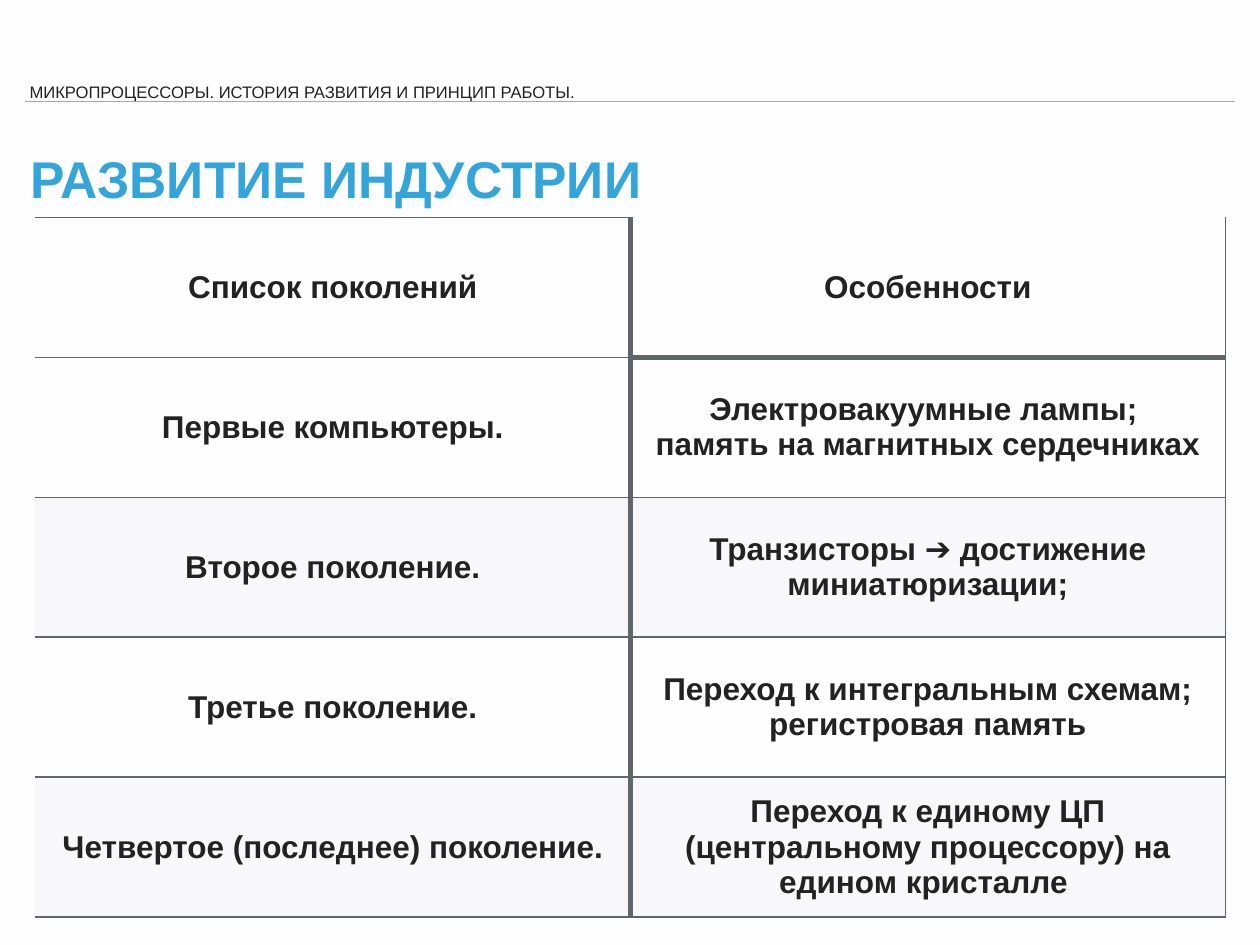
from lxml.etree import SubElement
from pptx import Presentation
from pptx.dml.color import RGBColor
from pptx.enum.shapes import MSO_CONNECTOR
from pptx.enum.text import MSO_ANCHOR, PP_ALIGN
from pptx.oxml.ns import qn
from pptx.util import Inches, Pt

ROWS = [
    ("Список поколений", ["Особенности"]),
    ("Первые компьютеры.", ["Электровакуумные лампы; ", "память на магнитных сердечниках"]),
    ("Второе поколение.", ["Транзисторы ➔ достижение миниатюризации;"]),
    ("Третье поколение.", ["Переход к интегральным схемам;", "регистровая память"]),
    ("Четвертое (последнее) поколение.",
     ["Переход к единому ЦП (центральному процессору) на едином кристалле "]),
]
BORDER = "5F6568"
THIN, THICK = 2, 7


def style_font(font, size, color, bold=False):
    font.name = "Arial"
    font.size = Pt(size)
    font.bold = bold
    font.color.rgb = RGBColor.from_string(color)


def add_border(cell, side, width):
    properties = cell._tc.get_or_add_tcPr()
    line = SubElement(properties, qn(f"a:ln{side}"), w=str(Pt(width)))
    if width:
        fill = SubElement(line, qn("a:solidFill"))
        SubElement(fill, qn("a:srgbClr"), val=BORDER)
    else:
        SubElement(line, qn("a:noFill"))


presentation = Presentation()
presentation.slide_width = Inches(20)
presentation.slide_height = Inches(15)
slide = presentation.slides.add_slide(presentation.slide_layouts[5])
slide.background.fill.solid()
slide.background.fill.fore_color.rgb = RGBColor.from_string("FEFDFF")

rule = slide.shapes.add_connector(
    MSO_CONNECTOR.STRAIGHT, Inches(0.4), Inches(1.61), Inches(19.6), Inches(1.61))
rule.line.color.rgb = RGBColor.from_string("A6AAA9")
rule.line.width = Pt(2)
SubElement(rule._element.spPr, qn("a:effectLst"))

header = slide.shapes.add_textbox(Inches(0.47), Inches(1.14), Inches(19.21), Inches(0.48))
title = slide.shapes.title
title.left, title.top = Inches(0.4), Inches(2.36)
title.width, title.height = Inches(19.21), Inches(1.11)
for shape, text, anchor, inset, size, color, bold in [
    (header, "МИКРОПРОЦЕССОРЫ. ИСТОРИЯ РАЗВИТИЯ И ПРИНЦИП РАБОТЫ.",
     MSO_ANCHOR.BOTTOM, 0, 19, "222222", False),
    (title, "РАЗВИТИЕ ИНДУСТРИИ", MSO_ANCHOR.MIDDLE, 0.08, 59, "34A5DA", True),
]:
    frame = shape.text_frame
    frame.word_wrap = True
    frame.vertical_anchor = anchor
    frame.margin_left = frame.margin_right = Inches(inset)
    frame.margin_top = frame.margin_bottom = Inches(inset)
    frame.text = text
    paragraph = frame.paragraphs[0]
    paragraph.alignment = PP_ALIGN.LEFT
    paragraph.line_spacing = 0.8
    style_font(paragraph.font, size, color, bold)

table = slide.shapes.add_table(
    len(ROWS), 2, Inches(0.56), Inches(3.45), Inches(18.89), Inches(11.11)).table
table.first_row = False
table.horz_banding = False

for row, (generation, features) in enumerate(ROWS):
    for column, lines in enumerate([[generation], features]):
        cell = table.cell(row, column)
        is_right = column == 1
        top = THIN
        if is_right and row < 2:
            top = THICK if row == 1 else 0
        bottom = THICK if is_right and row == 0 else THIN
        add_border(cell, "L", THICK if is_right else 0)
        add_border(cell, "R", THIN if is_right else THICK)
        add_border(cell, "T", top)
        add_border(cell, "B", bottom)
        if row in (2, 4):
            cell.fill.solid()
            cell.fill.fore_color.rgb = RGBColor.from_string("F8F7F9")
        else:
            cell.fill.background()
        cell.vertical_anchor = MSO_ANCHOR.MIDDLE
        cell.margin_left = cell.margin_right = Inches(0.04)
        cell.margin_top = cell.margin_bottom = Inches(0.04)
        cell.text = "\n".join(lines)
        for paragraph in cell.text_frame.paragraphs:
            paragraph.alignment = PP_ALIGN.CENTER
            style_font(paragraph.font, 36, "222222", True)

arrow_paragraph = table.cell(2, 1).text_frame.paragraphs[0]
before, arrow, after = arrow_paragraph.text.partition("➔")
arrow_paragraph.clear()
for text in (before, arrow, after):
    run = arrow_paragraph.add_run()
    run.text = text
    style_font(run.font, 36, "222222", text != arrow)

presentation.save("out.pptx")
